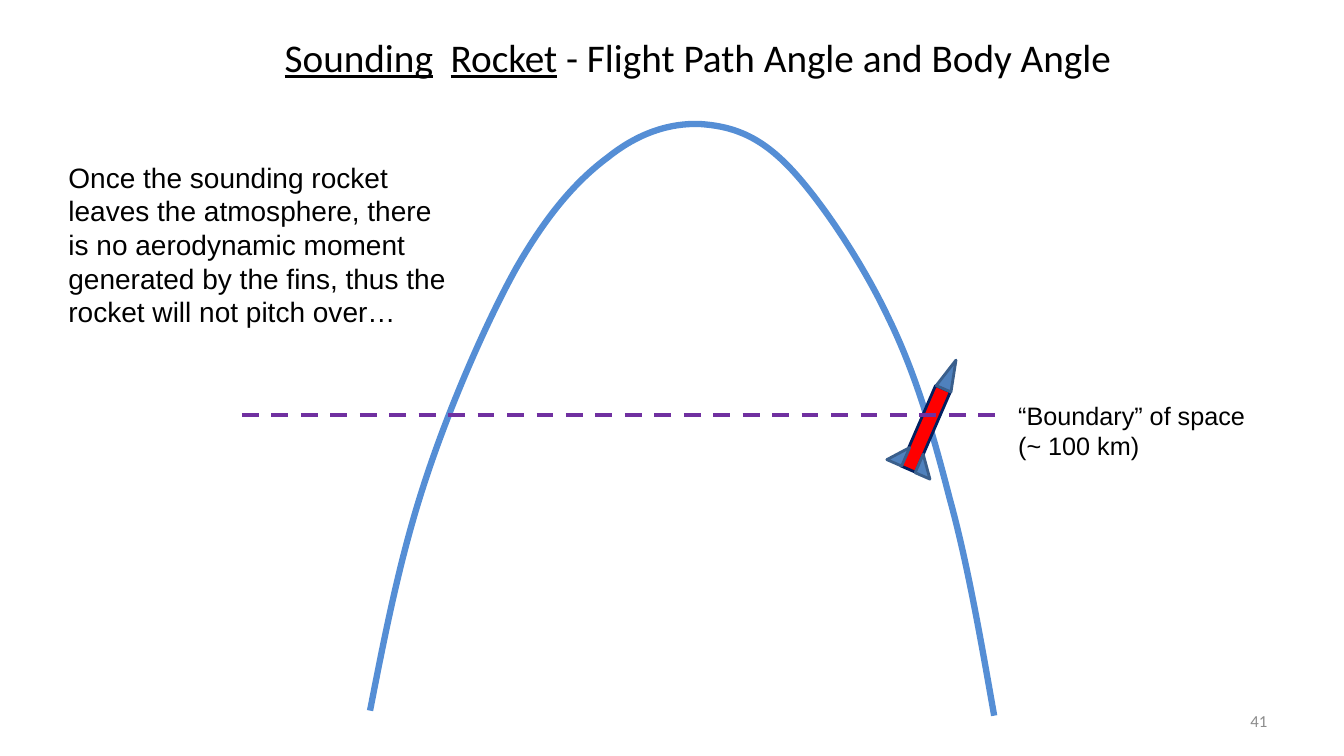
from dataclasses import dataclass

from pptx import Presentation
from pptx.dml.color import RGBColor
from pptx.enum.dml import MSO_LINE_DASH_STYLE as Dash
from pptx.enum.shapes import MSO_CONNECTOR, MSO_SHAPE as Preset
from pptx.enum.text import MSO_ANCHOR as Anchor, MSO_AUTO_SIZE as AutoSize, PP_ALIGN as Align
from pptx.oxml.ns import qn
from pptx.oxml.xmlchemy import OxmlElement
from pptx.shapes.autoshape import Shape
from pptx.shapes.group import GroupShape
from pptx.shapes.shapetree import SlideShapes
from pptx.slide import Slide
from pptx.text.text import TextFrame
from pptx.util import Pt

PX = 9144  # EMU in one px, 100 px to the inch
TITLE_ONLY = 5

BLACK = RGBColor(0x00, 0x00, 0x00)
GREY = RGBColor(0x8C, 0x8C, 0x8C)
PATH_BLUE = RGBColor(0x55, 0x8E, 0xD5)
PURPLE = RGBColor(0x70, 0x30, 0xA0)
RED = RGBColor(0xFF, 0x00, 0x00)
NAVY = RGBColor(0x00, 0x20, 0x60)
STEEL = RGBColor(0x4F, 0x81, 0xBD)
DARK_STEEL = RGBColor(0x3A, 0x5F, 0x8C)

ROCKET_TILT = 23.4

# Start, then two control points and an end point for each curve
TRAJECTORY = [
    (367, 705),
    (382, 628), (397, 552), (421, 479),
    (445, 405), (482, 320), (512, 266),
    (543, 212), (572, 179), (603, 156),
    (633, 132), (664, 122), (694, 123),
    (724, 125), (751, 133), (782, 165),
    (813, 197), (855, 260), (881, 315),
    (908, 370), (925, 429), (942, 495),
    (960, 560), (974, 642), (986, 710),
]


@dataclass(frozen=True)
class Box:
    left: int
    top: int
    width: int
    height: int

    def emu(self) -> tuple[int, int, int, int]:
        return self.left * PX, self.top * PX, self.width * PX, self.height * PX


@dataclass(frozen=True)
class Span:
    text: str
    underline: bool = False


@dataclass(frozen=True)
class RocketPart:
    preset: Preset
    box: Box
    fill: RGBColor = STEEL
    outline: RGBColor = DARK_STEEL
    mirrored: bool = False


ROCKET = [
    RocketPart(Preset.RECTANGLE, Box(910, 382, 16, 87), RED, NAVY),
    RocketPart(Preset.RIGHT_TRIANGLE, Box(911, 453, 16, 20)),
    RocketPart(Preset.RIGHT_TRIANGLE, Box(883, 440, 16, 20), mirrored=True),
    RocketPart(Preset.ISOSCELES_TRIANGLE, Box(934, 356, 16, 31)),
]


def write_text(frame: TextFrame, lines: list[list[Span]], *, size: int, font: str = "Arial",
               color: RGBColor = BLACK, align: Align = Align.LEFT,
               anchor: Anchor = Anchor.TOP, grow: bool = False) -> None:
    frame.word_wrap = True
    frame.auto_size = AutoSize.SHAPE_TO_FIT_TEXT if grow else AutoSize.NONE
    frame.vertical_anchor = anchor
    for index, spans in enumerate(lines):
        para = frame.add_paragraph() if index else frame.paragraphs[0]
        para.alignment = align
        for span in spans:
            run = para.add_run()
            run.text = span.text
            run.font.name = font
            run.font.size = Pt(size)
            run.font.color.rgb = color
            run.font.underline = span.underline


def draw_trajectory(page: Slide) -> None:
    (start_x, start_y), *points = TRAJECTORY
    builder = page.shapes.build_freeform(start_x, start_y, scale=PX)
    builder.add_line_segments(points, close=False)
    curve = builder.convert_to_shape()
    curve.shadow.inherit = False
    curve.fill.background()
    curve.line.color.rgb = PATH_BLUE
    curve.line.width = Pt(4.5)

    # Join every three straight segments into one cubic curve
    segments = list(curve.element.iter(qn("a:lnTo")))
    for first in range(0, len(segments), 3):
        cubic = OxmlElement("a:cubicBezTo")
        segments[first].addprevious(cubic)
        for segment in segments[first:first + 3]:
            cubic.append(segment[0])
            segment.getparent().remove(segment)


def draw_rocket_part(rocket: GroupShape, part: RocketPart) -> Shape:
    shape = rocket.shapes.add_shape(part.preset, *part.box.emu())
    shape.shadow.inherit = False
    shape.fill.solid()
    shape.fill.fore_color.rgb = part.fill
    shape.line.color.rgb = part.outline
    shape.line.width = Pt(2)
    shape.rotation = ROCKET_TILT
    if part.mirrored:
        shape.element.spPr.find(qn("a:xfrm")).set("flipH", "1")
    return shape


def draw_boundary(page: Slide) -> None:
    boundary = page.shapes.add_group_shape()
    line = boundary.shapes.add_connector(
        MSO_CONNECTOR.STRAIGHT, 240 * PX, 412 * PX, 988 * PX, 412 * PX)
    line.line.color.rgb = PURPLE
    line.line.width = Pt(3)
    line.line.dash_style = Dash.DASH
    line.element.spPr.append(OxmlElement("a:effectLst"))
    label = boundary.shapes.add_textbox(*Box(1000, 392, 267, 71).emu())
    write_text(label.text_frame, [[Span("“Boundary” of space")], [Span("(~ 100 km)")]],
               size=18, grow=True)


def add_caption(shapes: SlideShapes, box: Box, text: str, **text_format) -> None:
    write_text(shapes.add_textbox(*box.emu()).text_frame, [[Span(text)]], **text_format)


def main() -> None:
    deck = Presentation()
    deck.slide_width, deck.slide_height = 1333 * PX, 750 * PX
    page = deck.slides.add_slide(deck.slide_layouts[TITLE_ONLY])

    # Title
    title = page.shapes.title
    title.left, title.top, title.width, title.height = Box(242, 16, 900, 81).emu()
    heading = [Span("Sounding", underline=True), Span("  "), Span("Rocket", underline=True),
               Span(" - Flight Path Angle and Body Angle")]
    write_text(title.text_frame, [heading], size=28, font="Calibri",
               align=Align.CENTER, anchor=Anchor.MIDDLE)

    # Flight path and rocket
    draw_trajectory(page)
    rocket = page.shapes.add_group_shape()
    for part in ROCKET:
        draw_rocket_part(rocket, part)

    # Boundary of space, explanation and page number
    draw_boundary(page)
    add_caption(page.shapes, Box(58, 154, 399, 178),
                "Once the sounding rocket leaves the atmosphere, there is no aerodynamic moment "
                "generated by the fins, thus the rocket will not pitch over…", size=20, grow=True)
    add_caption(page.shapes, Box(956, 695, 311, 40), "41", size=12, font="Calibri",
                color=GREY, align=Align.RIGHT, anchor=Anchor.MIDDLE)

    deck.save("out.pptx")


if __name__ == "__main__":
    main()
